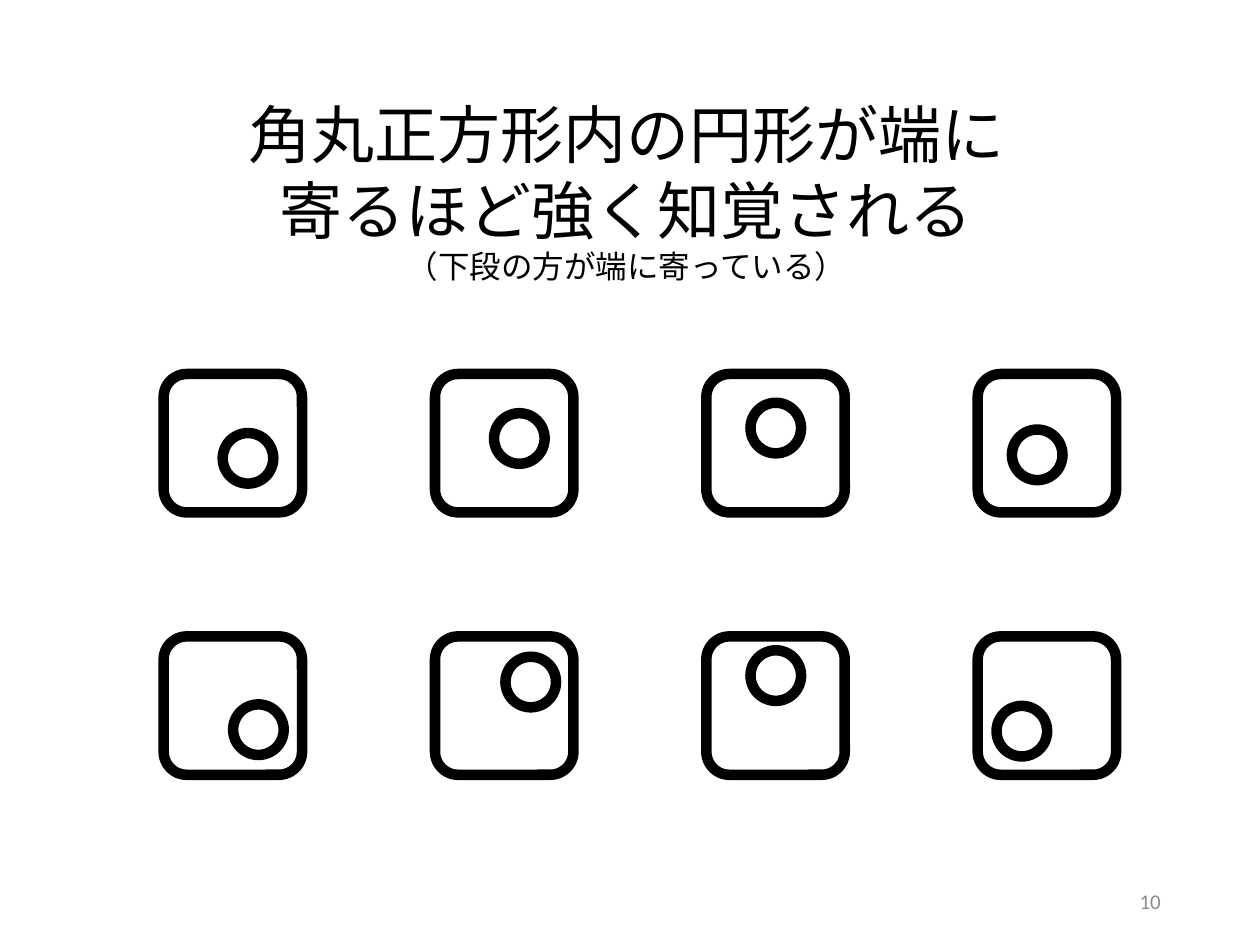
from dataclasses import dataclass

from lxml.etree import SubElement
from pptx import Presentation
from pptx.dml.color import RGBColor
from pptx.enum.shapes import MSO_SHAPE
from pptx.enum.text import MSO_ANCHOR, MSO_AUTO_SIZE, PP_ALIGN
from pptx.oxml.ns import qn
from pptx.util import Cm, Pt


@dataclass(frozen=True)
class Theme:
    ink: RGBColor = RGBColor(0x00, 0x00, 0x00)
    muted: RGBColor = RGBColor(0x8C, 0x8C, 0x8C)
    font: str = "Calibri"
    note_font: str = "Noto Sans CJK JP"
    title_size: int = 36
    note_size: int = 18
    number_size: int = 12
    outline: int = 6


THEME = Theme()
TITLE_LINES = [
    ("角丸正方形内の円形が端に", THEME.title_size, THEME.font),
    ("寄るほど強く知覚される", THEME.title_size, THEME.font),
    ("（下段の方が端に寄っている）", THEME.note_size, THEME.note_font),
]
SQUARE_SIDE, CIRCLE_SIDE = 2.79, 1.02
GRID_LEFT, GRID_TOP = 3.3, 7.54
COLUMN_PITCH, ROW_PITCH = 5.47, 5.29
CIRCLE_OFFSETS = [
    [(1.19, 1.19), (1.19, 0.79), (0.89, 0.58), (0.69, 1.12)],
    [(1.4, 1.37), (1.42, 0.41), (0.89, 0.28), (0.38, 1.4)],
]


def add_outline(slide, kind, left, top, side):
    """Add an unfilled square-proportioned shape with a thick outline."""
    shape = slide.shapes.add_shape(kind, Cm(left), Cm(top), Cm(side), Cm(side))
    shape.shadow.inherit = False
    shape.fill.background()
    shape.line.color.rgb = THEME.ink
    shape.line.width = Pt(THEME.outline)


def add_circle_in_square(slide, left, top, offset):
    """Add a rounded square and the circle offset inside it."""
    add_outline(slide, MSO_SHAPE.ROUNDED_RECTANGLE, left, top, SQUARE_SIDE)
    across, down = offset
    add_outline(slide, MSO_SHAPE.OVAL, left + across, top + down, CIRCLE_SIDE)


def add_text(slide, box, lines, alignment, color, anchor=MSO_ANCHOR.TOP):
    """Add a text box with one paragraph for each (text, size, font) line."""
    shape = slide.shapes.add_textbox(*(Cm(length) for length in box))
    frame = shape.text_frame
    frame.word_wrap = True
    frame.vertical_anchor = anchor
    for index, (text, size, font) in enumerate(lines):
        paragraph = frame.add_paragraph() if index else frame.paragraphs[0]
        paragraph.alignment = alignment
        run = paragraph.add_run()
        run.text = text
        run.font.size = Pt(size)
        run.font.name = font
        run.font.color.rgb = color
        properties = run.font._element
        properties.set("lang", "ja-JP")
        SubElement(properties, qn("a:ea")).set("typeface", THEME.font)
    return frame


def main():
    """Build and save the slide."""
    presentation = Presentation()
    presentation.slide_width, presentation.slide_height = Cm(25.4), Cm(19.05)
    slide = presentation.slides.add_slide(presentation.slide_layouts[6])
    for row, offsets in enumerate(CIRCLE_OFFSETS):
        for column, offset in enumerate(offsets):
            left = GRID_LEFT + column * COLUMN_PITCH
            top = GRID_TOP + row * ROW_PITCH
            add_circle_in_square(slide, left, top, offset)
    title = add_text(slide, (1.68, 1.8, 21.9, 4.12), TITLE_LINES,
                     PP_ALIGN.CENTER, THEME.ink)
    title.auto_size = MSO_AUTO_SIZE.SHAPE_TO_FIT_TEXT
    add_text(slide, (17.93, 17.65, 5.72, 1.02),
             [("10", THEME.number_size, THEME.font)],
             PP_ALIGN.RIGHT, THEME.muted, MSO_ANCHOR.MIDDLE)
    presentation.save("out.pptx")


if __name__ == "__main__":
    main()
